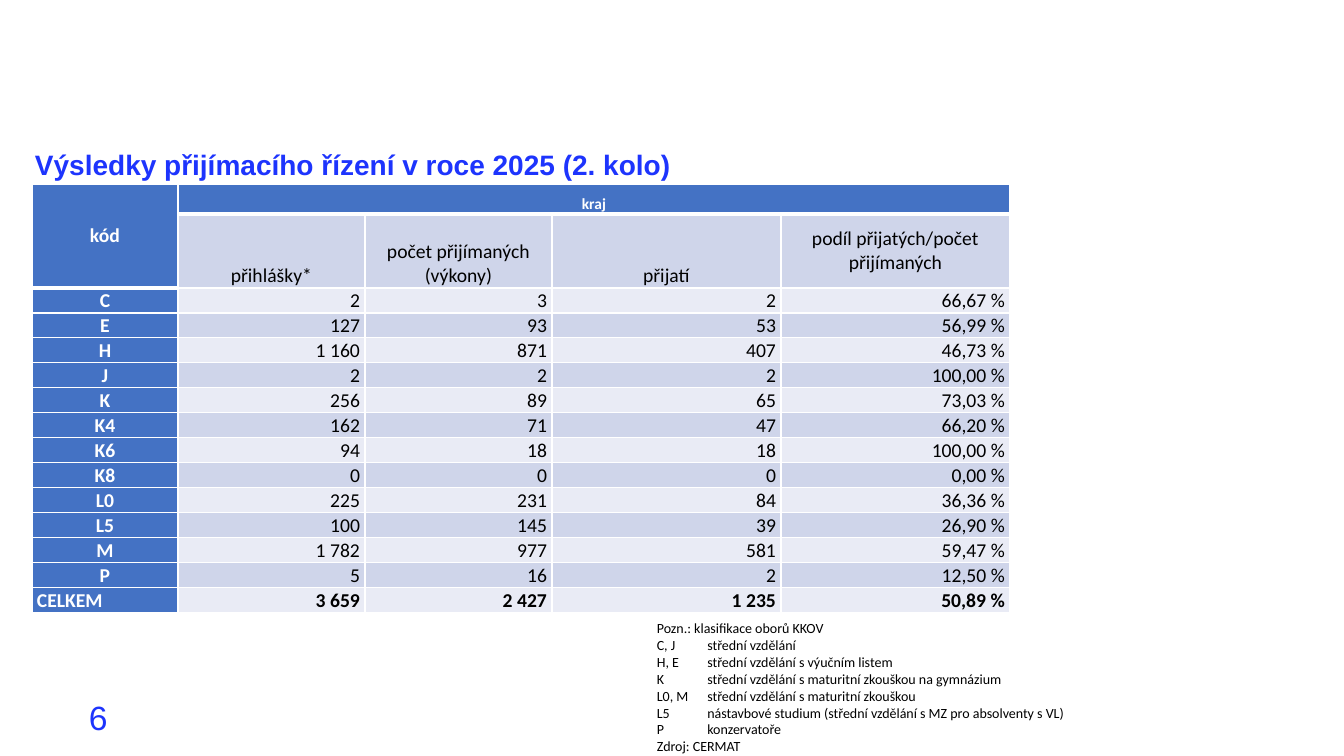
"""Build the slide with the 2025 admission results, second round."""
from dataclasses import dataclass
from itertools import product
from typing import Any

from lxml.etree import SubElement
from pptx import Presentation
from pptx.dml.color import RGBColor
from pptx.enum.text import MSO_ANCHOR as Anchor, PP_ALIGN as Align
from pptx.oxml.ns import qn
from pptx.util import Emu, Pt

EMU_PER_PX = 914400 / 100.8
COLOURS = {
    "white": "FFFFFF",
    "black": "000000",
    "title": "1D34FD",
    "header": "4472C4",
    "light": "E9EBF5",
    "dark": "CFD5EA",
}
COLUMN_WIDTHS = [146, 187, 187, 229, 229]
ROW_HEIGHTS = [30, 74] + [25] * 13
HEADINGS = ["", "přihlášky*", "počet přijímaných (výkony)", "přijatí", "podíl přijatých/počet přijímaných"]
RESULTS = [
    ["C", "2", "3", "2", "66,67 %"],
    ["E", "127", "93", "53", "56,99 %"],
    ["H", "1 160", "871", "407", "46,73 %"],
    ["J", "2", "2", "2", "100,00 %"],
    ["K", "256", "89", "65", "73,03 %"],
    ["K4", "162", "71", "47", "66,20 %"],
    ["K6", "94", "18", "18", "100,00 %"],
    ["K8", "0", "0", "0", "0,00 %"],
    ["L0", "225", "231", "84", "36,36 %"],
    ["L5", "100", "145", "39", "26,90 %"],
    ["M", "1 782", "977", "581", "59,47 %"],
    ["P", "5", "16", "2", "12,50 %"],
    ["CELKEM", "3 659", "2 427", "1 235", "50,89 %"],
]
ROWS = [["kód", "kraj", "", "", ""], HEADINGS, *RESULTS]
NOTES = [
    "Pozn.: klasifikace oborů KKOV",
    "C, J\tstřední vzdělání",
    "H, E\tstřední vzdělání s výučním listem",
    "K\tstřední vzdělání s maturitní zkouškou na gymnázium",
    "L0, M\tstřední vzdělání s maturitní zkouškou",
    "L5\tnástavbové studium (střední vzdělání s MZ pro absolventy s VL)",
    "P\tkonzervatoře",
    "Zdroj: CERMAT",
]


@dataclass(frozen=True)
class TextStyle:
    """Font and paragraph format of a text."""
    size: int
    colour: str
    name: str = "Calibri"
    bold: bool = False
    alignment: Any = Align.LEFT
    line_spacing: float = 1.0


@dataclass(frozen=True)
class TextBlock:
    """Text box with its place in px."""
    left: int
    top: int
    width: int
    height: int
    lines: list[str]
    style: TextStyle
    anchor: Any = Anchor.MIDDLE


BLOCKS = [
    TextBlock(79, 697, 302, 40, ["6"], TextStyle(24, "title", "Arial")),
    TextBlock(25, 129, 1206, 74, ["Výsledky přijímacího řízení v roce 2025 (2. kolo)"],
              TextStyle(20, "title", "Arial", bold=True, line_spacing=0.9)),
    TextBlock(647, 615, 523, 146, NOTES, TextStyle(10, "black"), Anchor.TOP),
]


def px(length: int) -> Emu:
    """Turn px into EMU."""
    return Emu(round(length * EMU_PER_PX))


def colour(name: str) -> RGBColor:
    """Look up a colour by name."""
    return RGBColor.from_string(COLOURS[name])


def set_format(target: Any, values: dict[str, Any]) -> None:
    """Set each format value as an attribute."""
    for name, value in values.items():
        setattr(target, name, value)


def write_lines(text_frame: Any, lines: list[str], style: TextStyle) -> None:
    """Write one paragraph for each line."""
    text_frame.text = "\n".join(lines)
    for paragraph in text_frame.paragraphs:
        set_format(paragraph, {"alignment": style.alignment, "line_spacing": style.line_spacing})
        set_format(paragraph.font, {"name": style.name, "size": Pt(style.size), "bold": style.bold})
        paragraph.font.color.rgb = colour(style.colour)


def draw_block(slide: Any, block: TextBlock) -> None:
    """Draw a text box."""
    shape = slide.shapes.add_textbox(px(block.left), px(block.top), px(block.width), px(block.height))
    set_format(shape.text_frame, {"word_wrap": True, "vertical_anchor": block.anchor})
    write_lines(shape.text_frame, block.lines, block.style)


def draw_borders(cell: Any, bottom_width: int) -> None:
    """Draw white borders around a cell."""
    properties = cell._tc.get_or_add_tcPr()
    for side, width in {"L": 1, "R": 1, "T": 1, "B": bottom_width}.items():
        line = SubElement(properties, qn(f"a:ln{side}"), w=str(Pt(width)))
        fill = SubElement(line, qn("a:solidFill"))
        SubElement(fill, qn("a:srgbClr"), val=COLOURS["white"])


def cell_style(row: int, column: int) -> TextStyle:
    """Choose the text style of a table cell."""
    last = row == len(ROWS) - 1
    header = row == 0 or column == 0
    if column == 0 and last:
        alignment = Align.LEFT
    elif header or row == 1:
        alignment = Align.CENTER
    else:
        alignment = Align.RIGHT
    return TextStyle(11 if row == 0 and column else 14, "white" if header else "black",
                     bold=header or last, alignment=alignment)


def draw_results(slide: Any) -> None:
    """Draw the table of results."""
    table = slide.shapes.add_table(len(ROWS), len(COLUMN_WIDTHS), px(32), px(184),
                                   px(sum(COLUMN_WIDTHS)), px(sum(ROW_HEIGHTS))).table
    set_format(table, {"first_row": False, "horz_banding": False})
    for column, width in zip(table.columns, COLUMN_WIDTHS):
        column.width = px(width)
    for row, height in zip(table.rows, ROW_HEIGHTS):
        row.height = px(height)
    last_column = len(COLUMN_WIDTHS) - 1
    middle_cells = {(0, 0), (1, last_column)}
    for row, column in product(range(len(ROWS)), range(len(COLUMN_WIDTHS))):
        cell = table.cell(row, column)
        header = row == 0 or column == 0
        draw_borders(cell, 3 if row == 0 or (row, column) == (1, 0) else 1)
        cell.fill.solid()
        band = "dark" if row % 2 else "light"
        cell.fill.fore_color.rgb = colour("header" if header else band)
        set_format(cell, {
            "margin_left": px(5), "margin_right": px(5), "margin_top": 0, "margin_bottom": 0,
            "vertical_anchor": Anchor.MIDDLE if (row, column) in middle_cells else Anchor.BOTTOM,
        })
        write_lines(cell.text_frame, [ROWS[row][column]], cell_style(row, column))
    table.cell(0, 0).merge(table.cell(1, 0))
    table.cell(0, 1).merge(table.cell(0, last_column))


def main() -> None:
    """Create and save the presentation."""
    presentation = Presentation()
    set_format(presentation, {"slide_width": px(1344), "slide_height": px(756)})
    slide = presentation.slides.add_slide(presentation.slide_layouts[6])
    for block in BLOCKS:
        draw_block(slide, block)
    draw_results(slide)
    presentation.save("out.pptx")


if __name__ == "__main__":
    main()
